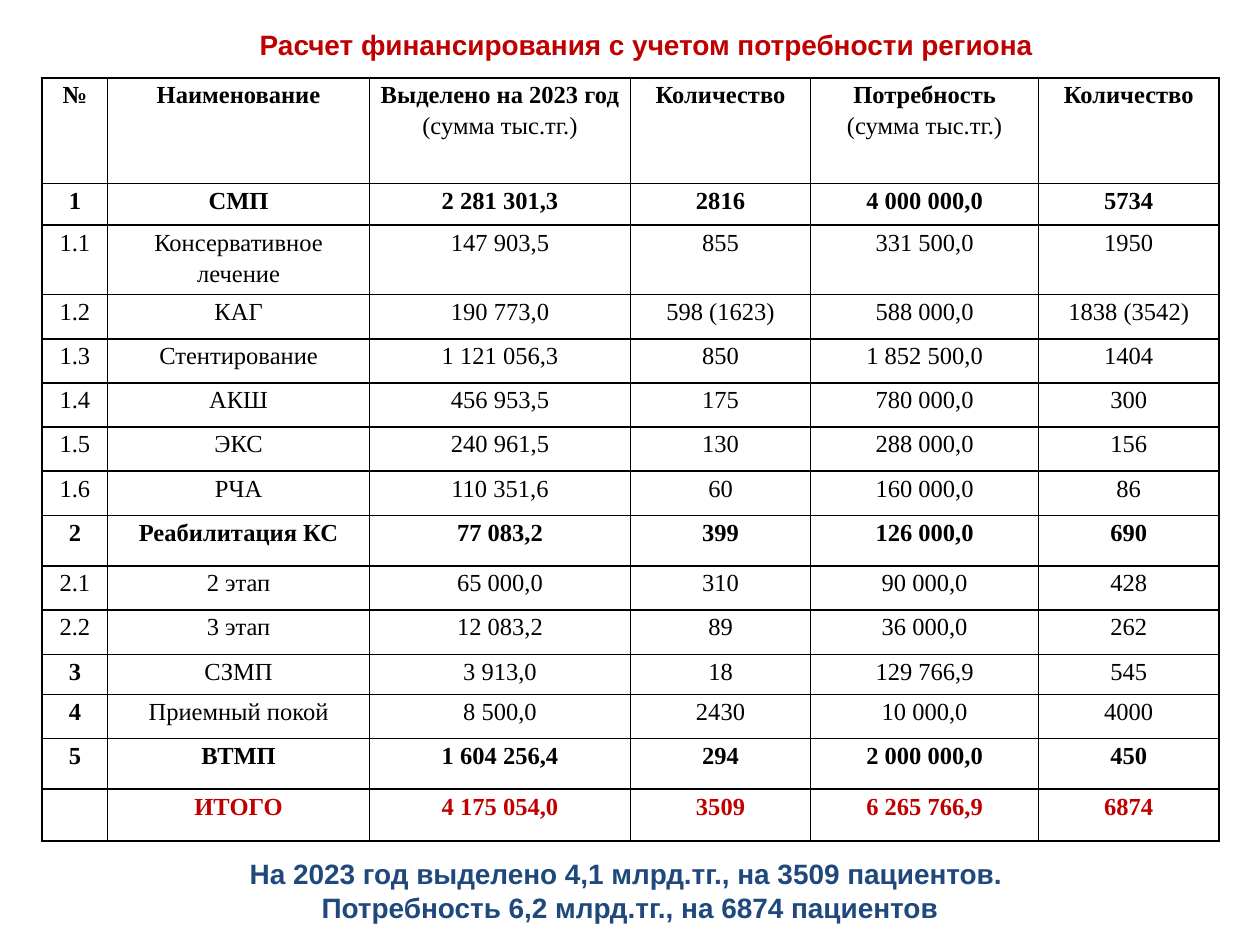
from lxml import etree
from pptx import Presentation
from pptx.dml.color import RGBColor
from pptx.enum.text import MSO_AUTO_SIZE, PP_ALIGN
from pptx.oxml.ns import qn
from pptx.util import Cm, Pt

CENTER = PP_ALIGN.CENTER
GROW = MSO_AUTO_SIZE.SHAPE_TO_FIT_TEXT
RED, BLUE, BLACK = "C00000", "1F497D", "000000"

COLUMN_WIDTHS = [1.32, 5.28, 5.26, 3.63, 4.6, 3.63]
ROW_HEIGHTS = [2.13, 0.84, 1.4] + [0.89] * 5 + [1.02, 0.89, 0.89, 0.81, 0.89, 1.02, 1.04]
BOLD_ROWS = {"№", "1", "2", "5", ""}
FUNDING = [
    ["№", "Наименование", "Выделено на 2023 год\n(сумма тыс.тг.)", "Количество",
     "Потребность\n(сумма тыс.тг.)", "Количество"],
    ["1", "СМП", "2 281 301,3", "2816", "4 000 000,0", "5734"],
    ["1.1", "Консервативное лечение", "147 903,5", "855", "331 500,0", "1950"],
    ["1.2", "КАГ", "190 773,0", "598 (1623)", "588 000,0", "1838 (3542)"],
    ["1.3", "Стентирование", "1 121 056,3", "850", "1 852 500,0", "1404"],
    ["1.4", "АКШ", "456 953,5", "175", "780 000,0", "300"],
    ["1.5", "ЭКС", "240 961,5", "130", "288 000,0", "156"],
    ["1.6", "РЧА", "110 351,6", "60", "160 000,0", "86"],
    ["2", "Реабилитация КС", "77 083,2", "399", "126 000,0", "690"],
    ["2.1", "2 этап", "65 000,0", "310", "90 000,0", "428"],
    ["2.2", "3 этап", "12 083,2", "89", "36 000,0", "262"],
    ["3", "СЗМП", "3 913,0", "18", "129 766,9", "545"],
    ["4", "Приемный покой", "8 500,0", "2430", "10 000,0", "4000"],
    ["5", "ВТМП", "1 604 256,4", "294", "2 000 000,0", "450"],
    ["", "ИТОГО", "4 175 054,0", "3509", "6 265 766,9", "6874"],
]


def rgb(value):
    """Turn a hex string into a colour."""
    return RGBColor.from_string(value)


def write_line(paragraph, wording, font, size, color, bold):
    """Write one centred line as a single run."""
    paragraph.alignment = CENTER
    run = paragraph.add_run()
    run.text = wording
    run.font.name = font
    run.font.size = Pt(size)
    run.font.bold = bold
    run.font.color.rgb = rgb(color)


def add_statement(slide, left, top, width, height, lines, color):
    """Place a bold centred statement in the given box."""
    frame = slide.shapes.add_textbox(Cm(left), Cm(top), Cm(width), Cm(height)).text_frame
    frame.word_wrap = True
    frame.auto_size = GROW
    for index, line in enumerate(lines):
        paragraph = frame.add_paragraph() if index else frame.paragraphs[0]
        write_line(paragraph, line, "Arial", 16, color, True)


def outline_cell(cell):
    """Draw a thin black border on all four sides of a cell."""
    properties = cell._tc.get_or_add_tcPr()
    for index, side in enumerate(("a:lnL", "a:lnR", "a:lnT", "a:lnB")):
        border = etree.Element(qn(side), w=str(Pt(1)))
        fill = etree.SubElement(border, qn("a:solidFill"))
        etree.SubElement(fill, qn("a:srgbClr"), val=BLACK)
        properties.insert(index, border)


def fill_cell(cell, wording, color, bold):
    """Style a cell and write its lines, the first one bold if asked."""
    cell.margin_left = cell.margin_right = Cm(0.1)
    cell.margin_top = cell.margin_bottom = 0
    cell.fill.background()
    outline_cell(cell)
    if not wording:
        return
    for index, line in enumerate(wording.split("\n")):
        paragraph = cell.text_frame.add_paragraph() if index else cell.text_frame.paragraphs[0]
        paragraph.line_spacing = 1.15
        write_line(paragraph, line, "Times New Roman", 14, color, bold and index == 0)


def add_funding_table(slide, left, top, width, height):
    """Place the funding table in the given box."""
    table = slide.shapes.add_table(len(FUNDING), len(COLUMN_WIDTHS), Cm(left), Cm(top),
                                   Cm(width), Cm(height)).table
    table.first_row = table.horz_banding = False
    for column, column_width in zip(table.columns, COLUMN_WIDTHS):
        column.width = Cm(column_width)
    for row, row_height, entries in zip(table.rows, ROW_HEIGHTS, FUNDING):
        row.height = Cm(row_height)
        number = entries[0]
        color = BLACK if number else RED
        for position, (cell, wording) in enumerate(zip(row.cells, entries)):
            bold = number in BOLD_ROWS or (position == 0 and "." not in number)
            fill_cell(cell, wording, color, bold)


def main():
    """Build the funding slide and save it."""
    presentation = Presentation()
    presentation.slide_width, presentation.slide_height = Cm(25.4), Cm(19.05)
    slide = presentation.slides.add_slide(presentation.slide_layouts[6])
    add_statement(slide, 1.7, 0.43, 22.66, 0.94,
                  ["Расчет финансирования с учетом потребности региона"], RED)
    add_funding_table(slide, 0.85, 1.57, sum(COLUMN_WIDTHS), sum(ROW_HEIGHTS))
    add_statement(slide, 0.85, 17.15, 23.7, 1.63,
                  ["На 2023 год выделено 4,1 млрд.тг., на 3509 пациентов. ",
                   "Потребность 6,2 млрд.тг., на 6874 пациентов"], BLUE)
    presentation.save("out.pptx")


if __name__ == "__main__":
    main()
